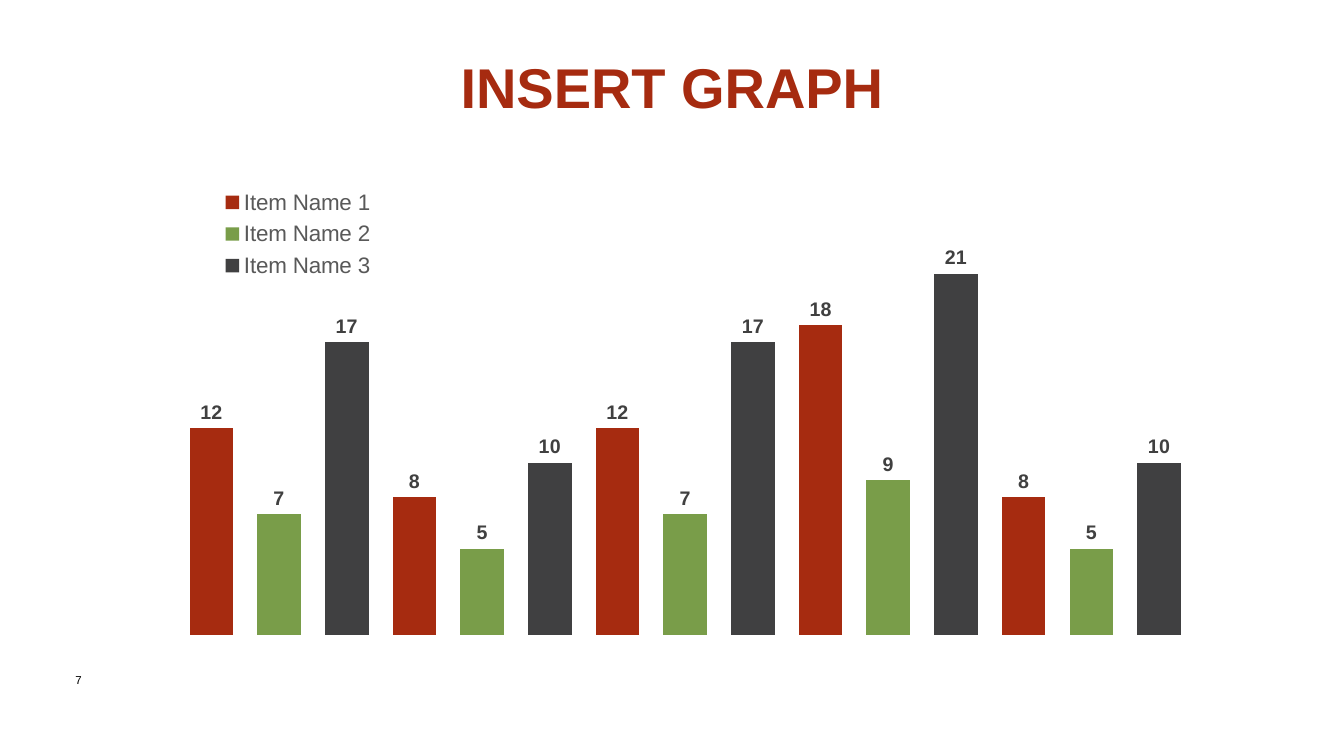
import pptx
import pptx.chart.data
import pptx.dml.color
import pptx.enum.chart
import pptx.enum.text
import pptx.oxml
import pptx.oxml.ns
import pptx.util
from pptx.util import Inches

RED = pptx.dml.color.RGBColor(0xA6, 0x2B, 0x10)
GREEN = pptx.dml.color.RGBColor(0x79, 0x9D, 0x49)
CHARCOAL = pptx.dml.color.RGBColor(0x40, 0x40, 0x41)
LABEL_GRAY = pptx.dml.color.RGBColor(0x40, 0x40, 0x40)
LEGEND_GRAY = pptx.dml.color.RGBColor(0x59, 0x59, 0x59)
BLACK = pptx.dml.color.RGBColor(0, 0, 0)
FONT = "Arial"

# Each item fills every third column, starting at its own offset
ITEMS = [
    ("Item Name 3", 2, [17, 10, 17, 21, 10], CHARCOAL),
    ("Item Name 2", 1, [7, 5, 7, 9, 5], GREEN),
    ("Item Name 1", 0, [12, 8, 12, 18, 8], RED),
]
COLUMN_COUNT = 15
LABEL_RISE = -0.06


def format_font(font, size, color, bold=False):
    font.name = FONT
    font.size = pptx.util.Pt(size)
    font.bold = bold
    font.color.rgb = color


def make_layout(inner=False, edge=True, **measures):
    """Build a manual chart layout from fractions of the chart area."""
    parts = '<c:layoutTarget val="inner"/>' if inner else ""
    if edge:
        parts += '<c:xMode val="edge"/><c:yMode val="edge"/>'
    parts += "".join(f'<c:{key} val="{value}"/>' for key, value in measures.items())
    return pptx.oxml.parse_xml(
        f'<c:layout {pptx.oxml.ns.nsdecls("c")}>'
        f"<c:manualLayout>{parts}</c:manualLayout></c:layout>")


def replace_layout(parent, layout, index):
    for old_layout in parent.xpath("c:layout"):
        parent.remove(old_layout)
    parent.insert(index, layout)


def add_title(slide, left, top, width, height):
    title = slide.shapes.title
    title.left, title.top, title.width, title.height = left, top, width, height
    frame = title.text_frame
    frame.text = "INSERT GRAPH"
    frame.vertical_anchor = pptx.enum.text.MSO_ANCHOR.MIDDLE
    paragraph = frame.paragraphs[0]
    paragraph.alignment = pptx.enum.text.PP_ALIGN.CENTER
    format_font(paragraph.runs[0].font, 40, RED, True)


def add_page_number(slide, left, top, width, height):
    frame = slide.shapes.add_textbox(left, top, width, height).text_frame
    frame.word_wrap = True
    frame.text = "7"
    format_font(frame.paragraphs[0].runs[0].font, 8.2, BLACK)


def label_columns(series, start):
    """Show the values just above the columns of one item."""
    position = pptx.enum.chart.XL_LABEL_POSITION.INSIDE_END
    labels = series.data_labels
    labels.show_value = True
    labels.position = position
    format_font(labels.font, 14, LABEL_GRAY, True)
    for index in range(start, COLUMN_COUNT, len(ITEMS)):
        label = series.points[index].data_label
        label.position = position
        format_font(label.font, 14, LABEL_GRAY, True)
    for element in series._element.xpath("c:dLbls/c:dLbl"):
        replace_layout(element, make_layout(edge=False, x=0, y=LABEL_RISE), 1)


def add_item_chart(slide, left, top, width, height):
    # Data
    data = pptx.chart.data.CategoryChartData()
    data.categories = [str(number + 1) for number in range(COLUMN_COUNT)]
    for name, start, amounts, _ in ITEMS:
        values = [None] * COLUMN_COUNT
        values[start::len(ITEMS)] = amounts
        data.add_series(name, values)
    chart = slide.shapes.add_chart(
        pptx.enum.chart.XL_CHART_TYPE.COLUMN_STACKED,
        left, top, width, height, data).chart
    format_font(chart.font, 10, BLACK)
    chart.has_title = False

    # Hidden axes
    chart.category_axis.visible = False
    chart.value_axis.visible = False
    chart.value_axis.has_major_gridlines = False
    chart.value_axis.minimum_scale = 0
    chart.value_axis.maximum_scale = 25

    # Columns
    plot = chart.plots[0]
    plot.gap_width = 55
    plot.overlap = 100
    plot.vary_by_categories = False
    for series, (_, start, _, color) in zip(plot.series, ITEMS):
        series.format.fill.solid()
        series.format.fill.fore_color.rgb = color
        label_columns(series, start)
    plot_area = chart._chartSpace.xpath("c:chart/c:plotArea")[0]
    replace_layout(
        plot_area, make_layout(inner=True, x=0.094, y=0.113, w=0.852, h=0.841), 0)

    # Legend
    chart.has_legend = True
    legend = chart.legend
    legend.position = pptx.enum.chart.XL_LEGEND_POSITION.RIGHT
    legend.include_in_layout = False
    format_font(legend.font, 16, LEGEND_GRAY)
    replace_layout(legend._element, make_layout(x=0.12, y=0.07, w=0.15, h=0.2), 1)


def main():
    presentation = pptx.Presentation()
    presentation.slide_width = Inches(13.33)
    presentation.slide_height = Inches(7.5)
    slide = presentation.slides.add_slide(presentation.slide_layouts[5])
    add_page_number(slide, Inches(0.65), Inches(6.63), Inches(0.58), Inches(0.54))
    add_title(slide, Inches(2.48), Inches(0.52), Inches(8.37), Inches(0.67))
    add_item_chart(slide, Inches(0.65), Inches(1.46), Inches(11.82), Inches(5.07))
    presentation.save("out.pptx")


if __name__ == "__main__":
    main()
